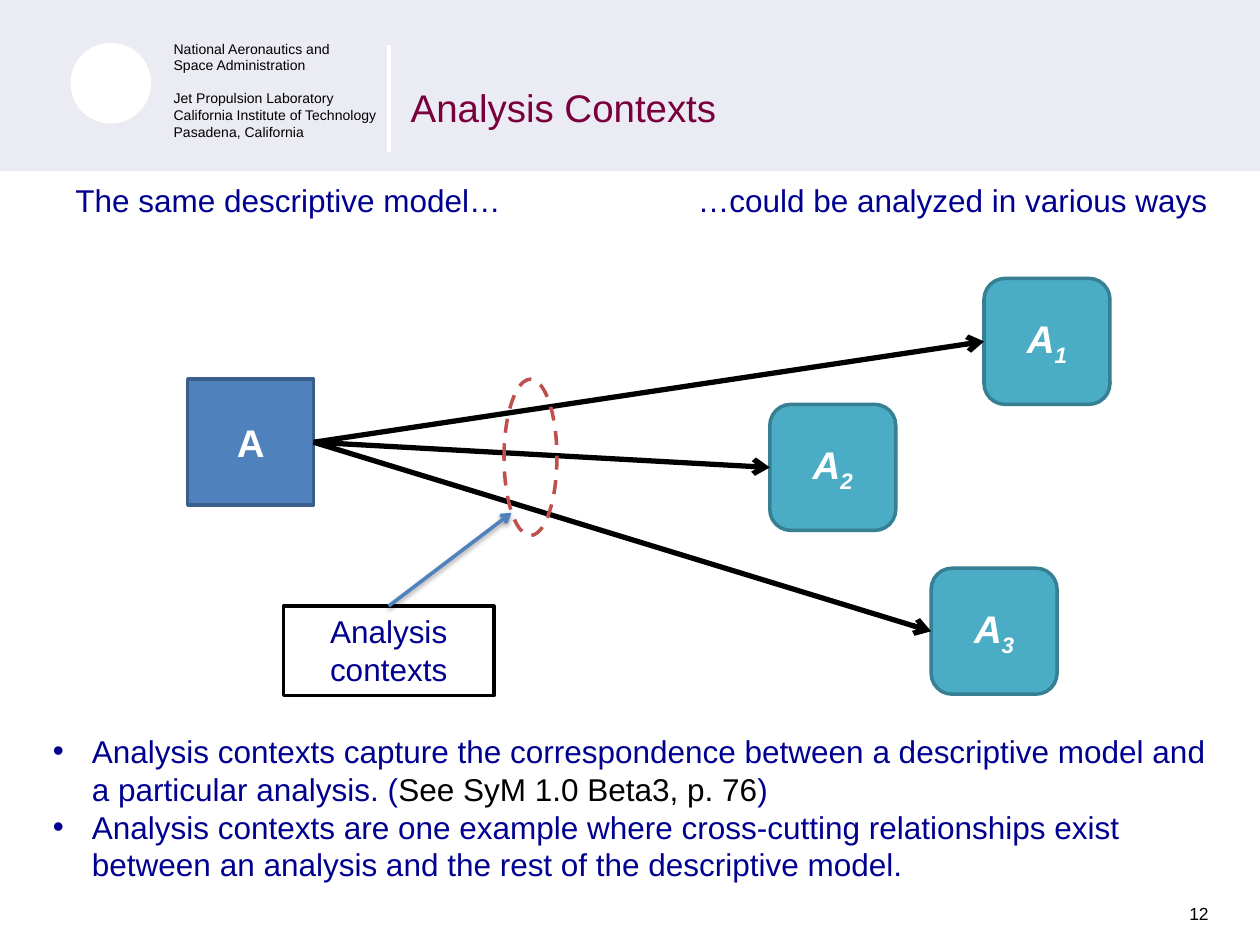
from dataclasses import dataclass

from lxml import etree
from pptx import Presentation
from pptx.dml.color import RGBColor
from pptx.enum.dml import MSO_LINE
from pptx.enum.shapes import MSO_CONNECTOR, MSO_SHAPE
from pptx.enum.text import MSO_ANCHOR, MSO_AUTO_SIZE, PP_ALIGN
from pptx.oxml.ns import qn
from pptx.util import Inches, Pt

RECTANGLE, ROUNDED, OVAL = MSO_SHAPE.RECTANGLE, MSO_SHAPE.ROUNDED_RECTANGLE, MSO_SHAPE.OVAL
STRAIGHT, DASH = MSO_CONNECTOR.STRAIGHT, MSO_LINE.DASH
LEFT, CENTER = PP_ALIGN.LEFT, PP_ALIGN.CENTER
TOP, MIDDLE = MSO_ANCHOR.TOP, MSO_ANCHOR.MIDDLE
NO_FIT = MSO_AUTO_SIZE.NONE
TOP_SITE, LEFT_SITE, RIGHT_SITE = 0, 1, 3


@dataclass(frozen=True)
class Theme:
    font: str = "Arial"
    banner: str = "EBEBF3"
    white: str = "FFFFFF"
    black: str = "000000"
    title: str = "79003C"
    text: str = "000090"
    model: str = "4F81BD"
    model_edge: str = "3A5F8C"
    analysis: str = "4BACC6"
    analysis_edge: str = "377F92"
    highlight: str = "C0504D"
    tiny: int = 8
    small: int = 10
    normal: int = 18
    large: int = 22


def set_values(target, values):
    for name, value in values.items():
        setattr(target, name, value)


class SlideBuilder:
    def __init__(self, deck, theme):
        self.theme = theme
        self.page = deck.slides.add_slide(deck.slide_layouts[1])

    def fill_text(self, box, paragraphs, size, color, anchor=TOP, wrap=True, bullet=False,
                  para_format=None, **font_format):
        """Fill a box; each paragraph is a list of (text, font overrides) spans."""
        frame = box.text_frame
        set_values(frame, dict(word_wrap=wrap, auto_size=NO_FIT, vertical_anchor=anchor))
        for index, spans in enumerate(paragraphs):
            para = frame.add_paragraph() if index else frame.paragraphs[0]
            set_values(para, dict(alignment=LEFT, space_before=Pt(0)) | (para_format or {}))
            if bullet:
                self.add_bullet(para)
            for text, overrides in spans:
                span = para.add_run()
                span.text = text
                values = dict(size=Pt(size), name=self.theme.font) | font_format | overrides
                span.font.color.rgb = RGBColor.from_string(values.pop("color", color))
                baseline = values.pop("baseline", None)
                set_values(span.font, values)
                if baseline:
                    span.font._element.set("baseline", str(baseline))
        return frame

    def add_bullet(self, para):
        properties = para._p.get_or_add_pPr()
        properties.set("marL", str(Inches(0.31)))
        properties.set("indent", str(-Inches(0.31)))
        etree.SubElement(properties, qn("a:buFont"), typeface=self.theme.font)
        etree.SubElement(properties, qn("a:buChar"), char="•")

    def place(self, box, left, top, width, height):
        set_values(box, dict(left=Inches(left), top=Inches(top),
                             width=Inches(width), height=Inches(height)))

    def title(self, text, *place):
        box = self.page.shapes.title
        self.place(box, *place)
        self.fill_text(box, [[(text, {})]], self.theme.large, self.theme.title, MIDDLE,
                       para_format=dict(line_spacing=0.9))

    def bullets(self, paragraphs, *place):
        box = self.page.placeholders[1]
        self.place(box, *place)
        self.fill_text(box, paragraphs, self.theme.normal, self.theme.text, bullet=True)

    def text(self, lines, place, size, color):
        box = self.page.shapes.add_textbox(*map(Inches, place))
        return self.fill_text(box, [[(line, {})] for line in lines], size, color, wrap=False)

    def shape(self, kind, place, fill=None, edge=None, dash=None):
        shape = self.page.shapes.add_shape(kind, *map(Inches, place))
        shape.shadow.inherit = False
        if fill:
            shape.fill.solid()
            shape.fill.fore_color.rgb = RGBColor.from_string(fill)
        else:
            shape.fill.background()
        if edge:
            shape.line.color.rgb = RGBColor.from_string(edge)
            set_values(shape.line, dict(width=Pt(2), dash_style=dash))
        else:
            shape.line.fill.background()
        return shape

    def node(self, kind, place, fill, edge, spans, **font_format):
        shape = self.shape(kind, place, fill, edge)
        self.fill_text(shape, [spans], self.theme.large, self.theme.white, MIDDLE,
                       para_format=dict(alignment=CENTER), bold=True, **font_format)
        return shape

    def line(self, start, end, color, width, arrow=True, shadow=False):
        """Draw a line; each end is a point or a (shape, connection site) pair."""
        points = [(0, 0) if hasattr(spot[0], "shape_id") else tuple(map(Inches, spot))
                  for spot in (start, end)]
        line = self.page.shapes.add_connector(STRAIGHT, *points[0], *points[1])
        for spot, connect in ((start, line.begin_connect), (end, line.end_connect)):
            if hasattr(spot[0], "shape_id"):
                connect(*spot)
        line.line.color.rgb = RGBColor.from_string(color)
        line.line.width = Pt(width)
        if arrow:
            etree.SubElement(line.line._get_or_add_ln(), qn("a:tailEnd"), type="arrow")
        effects = etree.SubElement(line._element.spPr, qn("a:effectLst"))
        if shadow:
            cast = etree.SubElement(effects, qn("a:outerShdw"), blurRad=str(Pt(3.1)),
                                    dist=str(Pt(1.6)), dir="5400000", rotWithShape="0")
            tone = etree.SubElement(cast, qn("a:srgbClr"), val=self.theme.black)
            etree.SubElement(tone, qn("a:alpha"), val="38000")


def add_header(slide, theme):
    banner = slide.shape(RECTANGLE, (0, 0, 10, 1.36), theme.banner)
    tree = banner._element.getparent()
    tree.insert(2, banner._element)  # behind the title placeholder
    slide.shape(OVAL, (0.56, 0.34, 0.64, 0.64), theme.white)
    slide.line((3.09, 0.36), (3.09, 1.21), theme.white, 2.25, arrow=False)
    address = slide.text(
        ["National Aeronautics and", "Space Administration", "Jet Propulsion Laboratory",
         "California Institute of Technology", "Pasadena, California"],
        (1.28, 0.27, 1.83, 0.9), theme.tiny, theme.black)
    address.paragraphs[2].space_before = Pt(9.2)
    slide.title("Analysis Contexts", 3.16, 0.25, 6.1, 1.25)


def add_diagram(slide, theme):
    slide.text(["The same descriptive model…"], (0.5, 1.39, 3.61, 0.4),
               theme.normal, theme.text)
    slide.text(["…could be analyzed in various ways"], (5.44, 1.39, 4.29, 0.4),
               theme.normal, theme.text)
    model = slide.node(RECTANGLE, (1.49, 3.01, 1, 1), theme.model, theme.model_edge,
                       [("A", {})])
    corners = [(7.81, 2.21), (6.11, 3.21), (7.39, 4.51)]
    for number, corner in enumerate(corners, start=1):
        analysis = slide.node(ROUNDED, (*corner, 1, 1), theme.analysis, theme.analysis_edge,
                              [("A", {}), (str(number), {"baseline": -25000})], italic=True)
        slide.line((model, RIGHT_SITE), (analysis, LEFT_SITE), theme.black, 3)
    slide.shape(OVAL, (4, 3.01, 0.42, 1.24), edge=theme.highlight, dash=DASH)
    label = slide.shape(RECTANGLE, (2.25, 4.81, 1.67, 0.71), theme.white, theme.black)
    slide.fill_text(label, [[("Analysis contexts", {})]], theme.normal, theme.text,
                    para_format=dict(alignment=CENTER))
    slide.line((label, TOP_SITE), (4.06, 4.07), theme.model, 2, shadow=True)


def main():
    deck = Presentation()
    deck.slide_width, deck.slide_height = Inches(10), Inches(7.5)
    theme = Theme()
    slide = SlideBuilder(deck, theme)
    add_header(slide, theme)
    add_diagram(slide, theme)
    slide.bullets([
        [("Analysis contexts capture the correspondence between a descriptive model and "
          "a particular analysis. (", {}),
         ("See SyM 1.0 Beta3, p. 76", {"color": theme.black}), (")", {})],
        [("Analysis contexts are one example where cross-cutting relationships exist "
          "between an analysis and the rest of the descriptive model.", {})],
    ], 0.32, 5.76, 9.41, 1.62)
    slide.text(["12"], (9.34, 7.12, 0.49, 0.27), theme.small, theme.black)
    deck.save("out.pptx")


if __name__ == "__main__":
    main()
